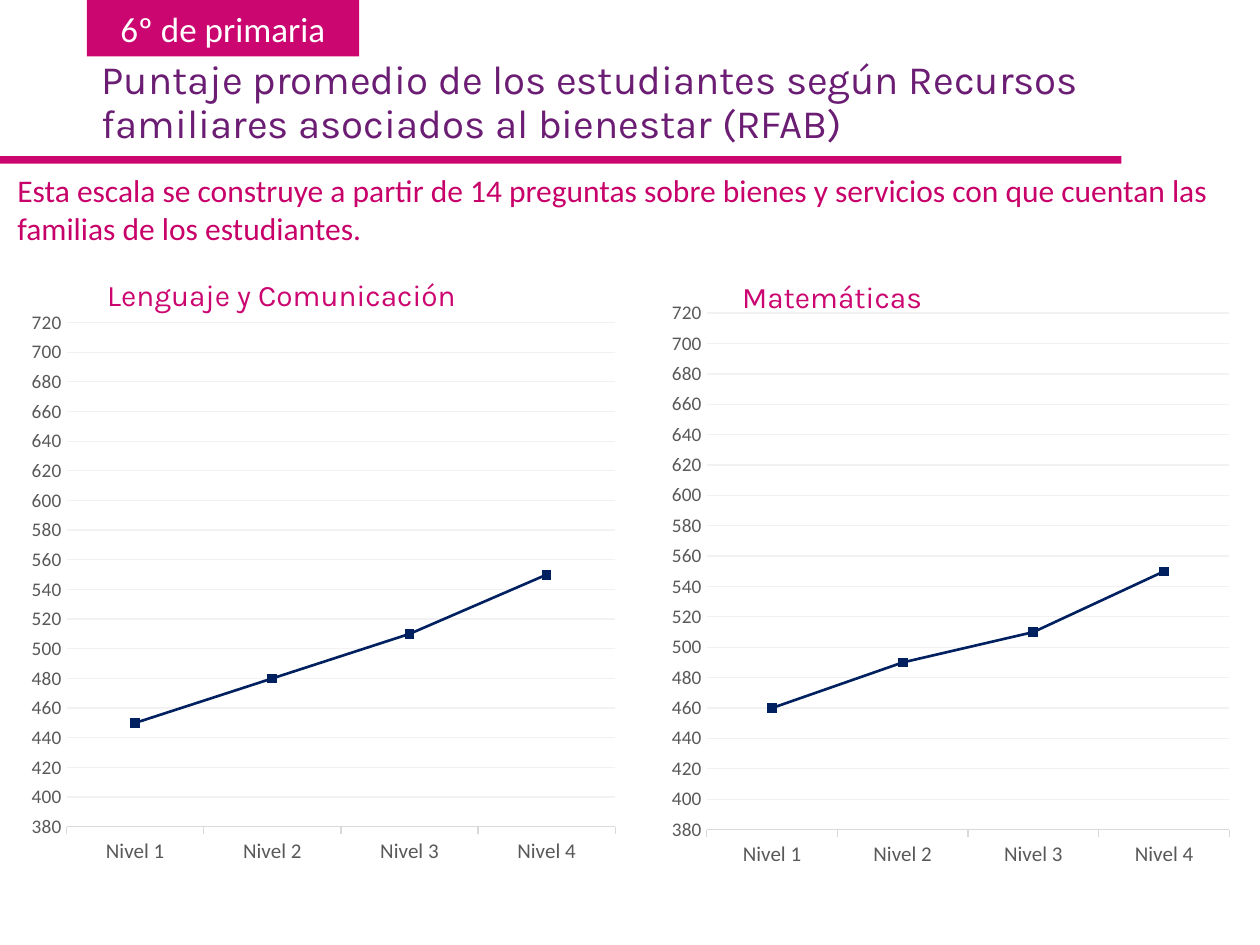
import pptx
import pptx.chart.data
import pptx.dml.color
import pptx.enum.chart
import pptx.enum.shapes
import pptx.enum.text
import pptx.util
from lxml import etree
from pptx.util import Cm, Pt

RGB = pptx.dml.color.RGBColor
PINK = RGB(0xCC, 0x06, 0x71)
ROSE = RGB(0xC8, 0x00, 0x69)
PLUM = RGB(0x6B, 0x1C, 0x73)
NAVY = RGB(0x00, 0x20, 0x60)
GRAY = RGB(0x59, 0x59, 0x59)
RULE = RGB(0xD9, 0xD9, 0xD9)
GRID = RGB(0xF2, 0xF2, 0xF2)
WHITE = RGB(0xFF, 0xFF, 0xFF)

LEVELS = ["Nivel 1", "Nivel 2", "Nivel 3", "Nivel 4"]
PLOT = {"x": 0.08, "y": 0.02, "w": 0.9, "h": 0.9}


def style(font, size, color, name="Calibri"):
    font.size, font.name = Pt(size), name
    font.color.rgb = color


def write(frame, text, size, color, name="Calibri"):
    frame.word_wrap = True
    frame.text = text
    par = frame.paragraphs[0]
    style(par.runs[0].font, size, color, name)
    return par


def add_text(slide, box, *look):
    shape = slide.shapes.add_textbox(*map(Cm, box))
    return write(shape.text_frame, *look)


def add_bar(slide, box):
    kind = pptx.enum.shapes.MSO_SHAPE.RECTANGLE
    bar = slide.shapes.add_shape(kind, *map(Cm, box))
    bar.shadow.inherit = False
    bar.fill.solid()
    bar.fill.fore_color.rgb = PINK
    bar.line.fill.background()
    return bar


def fix_plot(chart):
    """Set the inner plot area as fractions of the chart."""
    area = chart._chartSpace.chart.plotArea
    space = etree.QName(area).namespace
    for old in area.findall(f"{{{space}}}layout"):
        area.remove(old)
    layout = etree.Element(f"{{{space}}}layout")
    manual = etree.SubElement(layout, f"{{{space}}}manualLayout")
    parts = [("layoutTarget", "inner"), ("xMode", "edge"), ("yMode", "edge")]
    for tag, val in parts + list(PLOT.items()):
        etree.SubElement(manual, f"{{{space}}}{tag}").set("val", str(val))
    area.insert(0, layout)


def add_chart(slide, box, values):
    data = pptx.chart.data.CategoryChartData()
    data.categories = LEVELS
    data.add_series("Series 1", values)
    kinds = pptx.enum.chart
    chart = slide.shapes.add_chart(
        kinds.XL_CHART_TYPE.LINE_MARKERS, *map(Cm, box), data).chart
    chart.has_title = chart.has_legend = False
    chart.font.size, chart.font.name = Pt(10), "Calibri"
    chart.plots[0].vary_by_categories = False
    fix_plot(chart)

    # Level axis
    base = chart.category_axis
    style(base.tick_labels.font, 12, GRAY)
    base.major_tick_mark = kinds.XL_TICK_MARK.OUTSIDE
    base.format.line.color.rgb = RULE
    base.format.line.width = Pt(0.75)

    # Score axis
    score = chart.value_axis
    style(score.tick_labels.font, 11, GRAY)
    score.minimum_scale, score.maximum_scale = 380, 730
    score.major_unit = 20
    score.major_tick_mark = kinds.XL_TICK_MARK.NONE
    score.format.line.fill.background()
    score.has_major_gridlines = True
    grid = score.major_gridlines.format.line
    grid.color.rgb, grid.width = GRID, Pt(0.75)

    # Score line and its markers
    line = chart.plots[0].series[0]
    line.smooth = False
    line.format.line.color.rgb = NAVY
    line.format.line.width = Pt(1.5)
    mark = line.marker
    mark.style, mark.size = kinds.XL_MARKER_STYLE.SQUARE, 5
    mark.format.fill.solid()
    mark.format.fill.fore_color.rgb = NAVY
    mark.format.line.color.rgb = NAVY


def add_header(slide, left, top, width):
    # Grade tab
    tab = add_bar(slide, (left + 1.75, top, 5.49, 1.14))
    tab.text_frame.vertical_anchor = pptx.enum.text.MSO_ANCHOR.MIDDLE
    par = write(tab.text_frame, "6º de primaria", 20, WHITE)
    par.alignment = pptx.enum.text.PP_ALIGN.CENTER

    # Title and rule
    par = add_text(
        slide, (left + 1.8, top + 1.09, width - 2.18, 2.62),
        "Puntaje promedio de los estudiantes según Recursos "
        "familiares asociados al bienestar (RFAB)", 23, PLUM, "Karla")
    par.line_spacing = 0.9
    add_bar(slide, (left, top + 3.15, width - 2.79, 0.15))

    # Note on the scale
    add_text(
        slide, (left + 0.1, top + 3.33, width - 0.66, 1.8),
        "Esta escala se construye a partir de 14 preguntas sobre bienes y "
        "servicios con que cuentan las familias de los estudiantes.",
        18, ROSE)


def add_panel(slide, box, head, inset, rise, values):
    left, top, width, height = box
    add_chart(slide, box, values)
    par = add_text(slide, (left + inset, top - rise, width - inset, 0.99),
                   head, 17, PINK, "Karla")
    par.space_before = Pt(10)


def main():
    deck = pptx.Presentation()
    deck.slide_width, deck.slide_height = Cm(25.4), Cm(19.05)
    slide = deck.slides.add_slide(deck.slide_layouts[6])
    add_header(slide, 0, 0, 25.4)
    add_panel(slide, (0.36, 5.97, 12.29, 11.63), "Lenguaje y Comunicación",
              1.55, 0.51, (450, 480, 510, 550))
    add_panel(slide, (13.31, 5.77, 11.71, 11.91), "Matemáticas",
              1.4, 0.28, (460, 490, 510, 550))
    deck.save("out.pptx")


if __name__ == "__main__":
    main()
